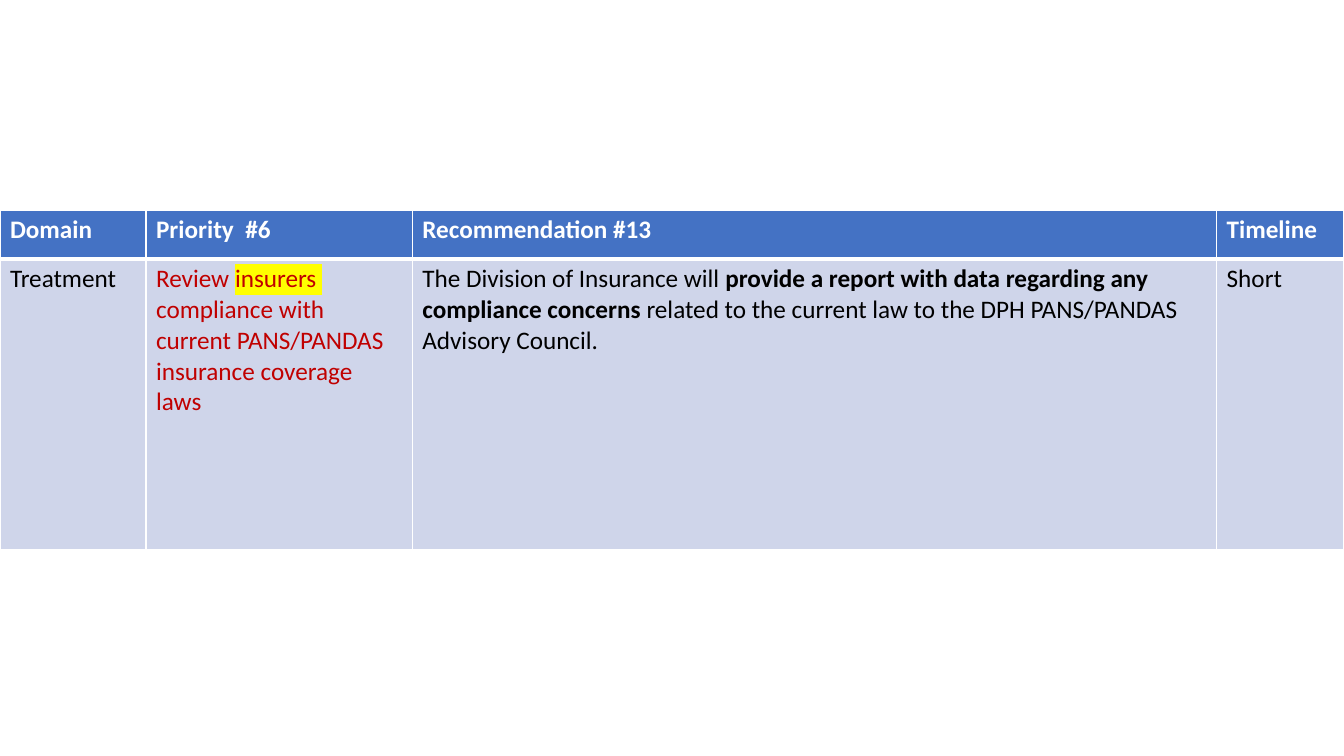
import pptx
import pptx.dml.color
import pptx.oxml
import pptx.oxml.ns
import pptx.util
from pptx.util import Cm

HEADER_FILL = "4472C4"
BODY_FILL = "CFD5EA"
WHITE = "FFFFFF"
BLACK = "000000"
RED = "C00000"
YELLOW = "FFFF00"

COLUMN_WIDTHS = [3.68, 6.71, 20.27, 3.2]
HEADINGS = ["Domain", "Priority  #6", "Recommendation #13", "Timeline"]
PRIORITY = [
    [("Review ", False, None), ("insurers ", False, YELLOW)],
    [("compliance with", False, None)],
    [("current PANS/PANDAS insurance coverage", False, None)],
    [("laws", False, None)],
]
RECOMMENDATION = [[
    ("The Division of Insurance will ", False, None),
    ("provide a report with data regarding any compliance concerns", True, None),
    (" related to the current law to the DPH PANS/PANDAS Advisory Council.", False, None),
]]


def rgb(value):
    return pptx.dml.color.RGBColor.from_string(value)


def plain(text, bold=False):
    return [[(text, bold, None)]]


def highlight(run, color):
    mark = pptx.oxml.parse_xml(
        f'<a:highlight {pptx.oxml.ns.nsdecls("a")}><a:srgbClr val="{color}"/></a:highlight>')
    run.font.fill.solid()
    run.font.color.rgb = rgb(RED)
    run.font._element.find(pptx.oxml.ns.qn("a:solidFill")).addnext(mark)


def set_borders(cell, widths):
    properties = cell._tc.get_or_add_tcPr()
    for side, width in zip("LRTB", widths):
        properties.append(pptx.oxml.parse_xml(
            f'<a:ln{side} {pptx.oxml.ns.nsdecls("a")} w="{pptx.util.Pt(width)}">'
            f'<a:solidFill><a:srgbClr val="{WHITE}"/></a:solidFill></a:ln{side}>'))


def fill_cell(cell, paragraphs, fill, color, border_widths):
    set_borders(cell, border_widths)
    cell.fill.solid()
    cell.fill.fore_color.rgb = rgb(fill)
    frame = cell.text_frame
    for index, pieces in enumerate(paragraphs):
        paragraph = frame.add_paragraph() if index else frame.paragraphs[0]
        paragraph.font.name = "Calibri"
        paragraph.font.size = pptx.util.Pt(18)
        for text, bold, mark in pieces:
            run = paragraph.add_run()
            run.text = text
            run.font.bold = bold
            run.font.color.rgb = rgb(color)
            if mark:
                highlight(run, mark)


def add_recommendation_table(slide):
    table = slide.shapes.add_table(
        2, len(HEADINGS), Cm(0), Cm(5.29), Cm(sum(COLUMN_WIDTHS)), Cm(8.57)).table
    for column, width in zip(table.columns, COLUMN_WIDTHS):
        column.width = Cm(width)
    for row, height in zip(table.rows, [1.23, 7.34]):
        row.height = Cm(height)

    body = [plain("Treatment"), PRIORITY, RECOMMENDATION, plain("Short")]
    for index, (heading, content) in enumerate(zip(HEADINGS, body)):
        fill_cell(table.cell(0, index), plain(heading, True), HEADER_FILL, WHITE, (1, 1, 1, 3))
        color = RED if content is PRIORITY else BLACK
        fill_cell(table.cell(1, index), content, BODY_FILL, color, (1, 1, 3, 1))


def main():
    presentation = pptx.Presentation()
    presentation.slide_width = Cm(33.87)
    presentation.slide_height = Cm(19.05)
    slide = presentation.slides.add_slide(presentation.slide_layouts[6])
    add_recommendation_table(slide)
    presentation.save("out.pptx")


if __name__ == "__main__":
    main()
